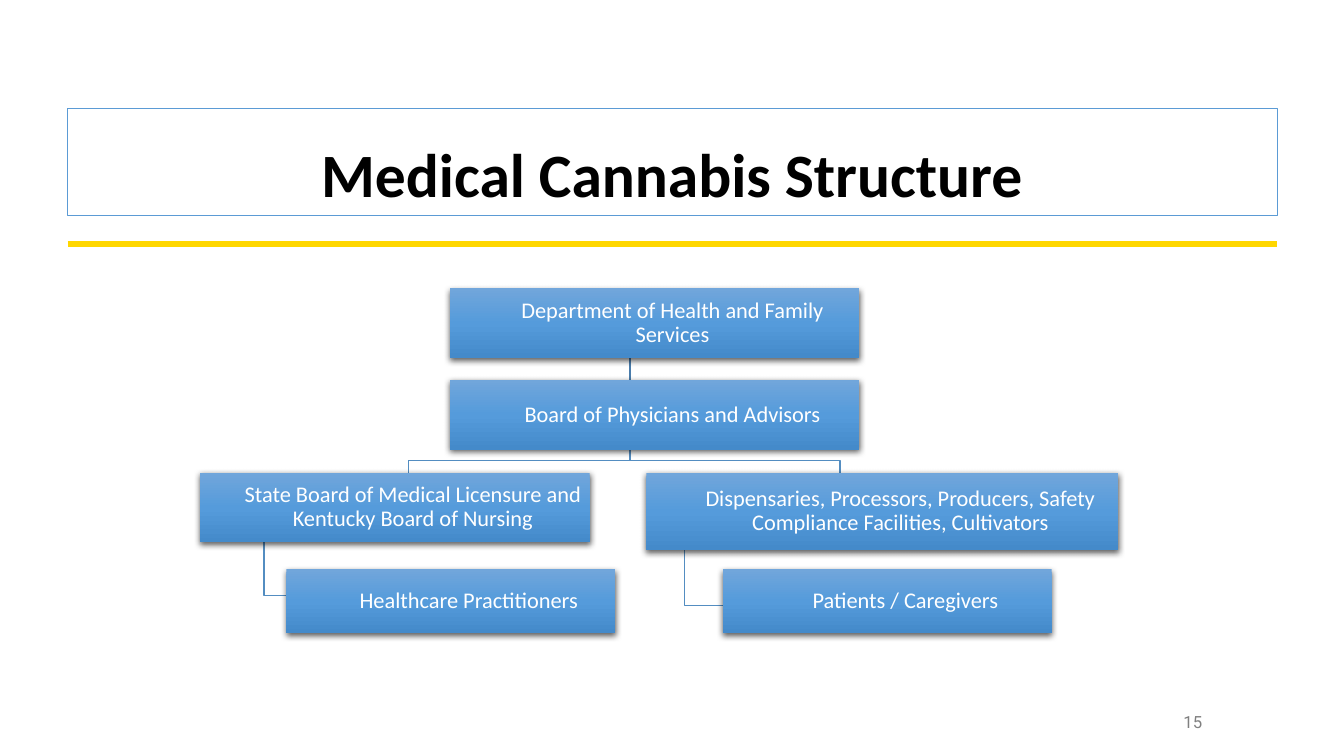
import dataclasses

import lxml.etree
import pptx
import pptx.dml.color
import pptx.enum.shapes
import pptx.enum.text
import pptx.oxml.ns
import pptx.util

EMU_PER_PX = 9144
ALIGN = pptx.enum.text.PP_ALIGN
ANCHOR = pptx.enum.text.MSO_ANCHOR
qualified = pptx.oxml.ns.qn


@dataclasses.dataclass(frozen=True)
class Theme:
    font: str = "Calibri"
    number_font: str = "Roboto"
    title_size: int = 44
    box_size: int = 16
    number_size: int = 12
    title_color: str = "000000"
    box_color: str = "FFFFFF"
    number_color: str = "808080"
    frame: str = "5B9BD5"
    rule: str = "FFD700"
    link: str = "538DC1"
    trunk: str = "497CAB"
    shadow: str = "000000"
    gradient: tuple = ((0, "71A6DB"), (50, "559BDB"), (100, "448ACA"))


THEME = Theme()

BOXES = (
    ("Department of Health and Family Services", 446, 286, 406, 69),
    ("Board of Physicians and Advisors", 446, 377, 406, 69),
    ("State Board of Medical Licensure and Kentucky Board of Nursing", 198, 469, 387, 69),
    ("Healthcare Practitioners", 284, 565, 326, 63),
    ("Dispensaries, Processors, Producers, Safety Compliance Facilities, Cultivators",
     641, 469, 468, 77),
    ("Patients / Caregivers", 717, 565, 326, 63),
)

LINKS = (
    ((679, 546), (679, 601), (717, 601)),
    ((625, 446), (625, 457), (833, 457), (833, 469)),
    ((262, 538), (262, 591), (284, 591)),
    ((625, 446), (625, 457), (405, 457), (405, 469)),
)


def px(length):
    return pptx.util.Emu(length * EMU_PER_PX)


def rgb(color):
    return pptx.dml.color.RGBColor.from_string(color)


def set_line(shape, color, width):
    shape.line.color.rgb = rgb(color)
    shape.line.width = pptx.util.Pt(width)


def write_text(shape, text, font, size, color, anchor, bold=False):
    frame = shape.text_frame
    frame.word_wrap = True
    frame.auto_size = pptx.enum.text.MSO_AUTO_SIZE.NONE
    frame.vertical_anchor = anchor
    frame.text = text
    paragraph = frame.paragraphs[0]
    paragraph.alignment = ALIGN.CENTER
    paragraph.line_spacing = 0.9
    paragraph.font.name = font
    paragraph.font.size = pptx.util.Pt(size)
    paragraph.font.bold = bold
    paragraph.font.color.rgb = rgb(color)
    return frame


def add_color(parent, color):
    return lxml.etree.SubElement(parent, qualified("a:srgbClr"), val=color)


def fill_gradient(shape, stops):
    shape.fill.gradient()
    shape.fill.gradient_angle = 270
    stop_list = next(shape.element.iter(qualified("a:gsLst")))
    for stop in list(stop_list):
        stop_list.remove(stop)
    for percent, color in stops:
        stop = lxml.etree.SubElement(stop_list, qualified("a:gs"), pos=str(percent * 1000))
        add_color(stop, color)


def cast_shadow(shape):
    shape.shadow.inherit = False
    effects = next(shape.element.iter(qualified("a:effectLst")))
    shadow = lxml.etree.SubElement(
        effects, qualified("a:outerShdw"), blurRad=str(pptx.util.Pt(4.5)),
        dist=str(pptx.util.Pt(1.5)), dir="5400000", algn="ctr", rotWithShape="0")
    color = add_color(shadow, THEME.shadow)
    lxml.etree.SubElement(color, qualified("a:alpha"), val="63000")


def add_line(slide, start, end, color, width):
    line = slide.shapes.add_connector(
        pptx.enum.shapes.MSO_CONNECTOR.STRAIGHT, *map(px, start + end))
    set_line(line, color, width)
    lxml.etree.SubElement(line.element.spPr, qualified("a:effectLst"))


def add_link(slide, points):
    start, *bends = points
    builder = slide.shapes.build_freeform(*start, scale=EMU_PER_PX)
    builder.add_line_segments(bends, close=False)
    link = builder.convert_to_shape()
    link.fill.background()
    set_line(link, THEME.link, 1)
    link.shadow.inherit = False


def add_box(slide, text, left, top, width, height):
    box = slide.shapes.add_shape(
        pptx.enum.shapes.MSO_SHAPE.RECTANGLE, px(left), px(top), px(width), px(height))
    fill_gradient(box, THEME.gradient)
    box.line.fill.background()
    cast_shadow(box)
    frame = write_text(box, text, THEME.font, THEME.box_size, THEME.box_color, ANCHOR.MIDDLE)
    frame.margin_left = px(37)
    frame.margin_top = frame.margin_right = frame.margin_bottom = px(1)


def add_title(slide, text):
    title = slide.shapes.title
    title.left, title.top, title.width, title.height = map(px, (67, 108, 1200, 106))
    set_line(title, THEME.frame, 0.75)
    write_text(title, text, THEME.font, THEME.title_size, THEME.title_color,
               ANCHOR.BOTTOM, bold=True)


def add_page_number(slide, number):
    box = slide.shapes.add_textbox(px(1144), px(700), px(78), px(33))
    frame = write_text(box, number, THEME.number_font, THEME.number_size,
                       THEME.number_color, ANCHOR.MIDDLE)
    frame.paragraphs[0].line_spacing = 1.0


def main():
    presentation = pptx.Presentation()
    presentation.slide_width = px(1333)
    presentation.slide_height = px(750)
    slide = presentation.slides.add_slide(presentation.slide_layouts[5])

    add_line(slide, (67, 242), (1267, 242), THEME.rule, 4.5)
    add_title(slide, "Medical Cannabis Structure")
    for points in LINKS:
        add_link(slide, points)
    add_line(slide, (625, 355), (625, 377), THEME.trunk, 1)
    for box in BOXES:
        add_box(slide, *box)
    add_page_number(slide, "15")

    presentation.save("out.pptx")


if __name__ == "__main__":
    main()
